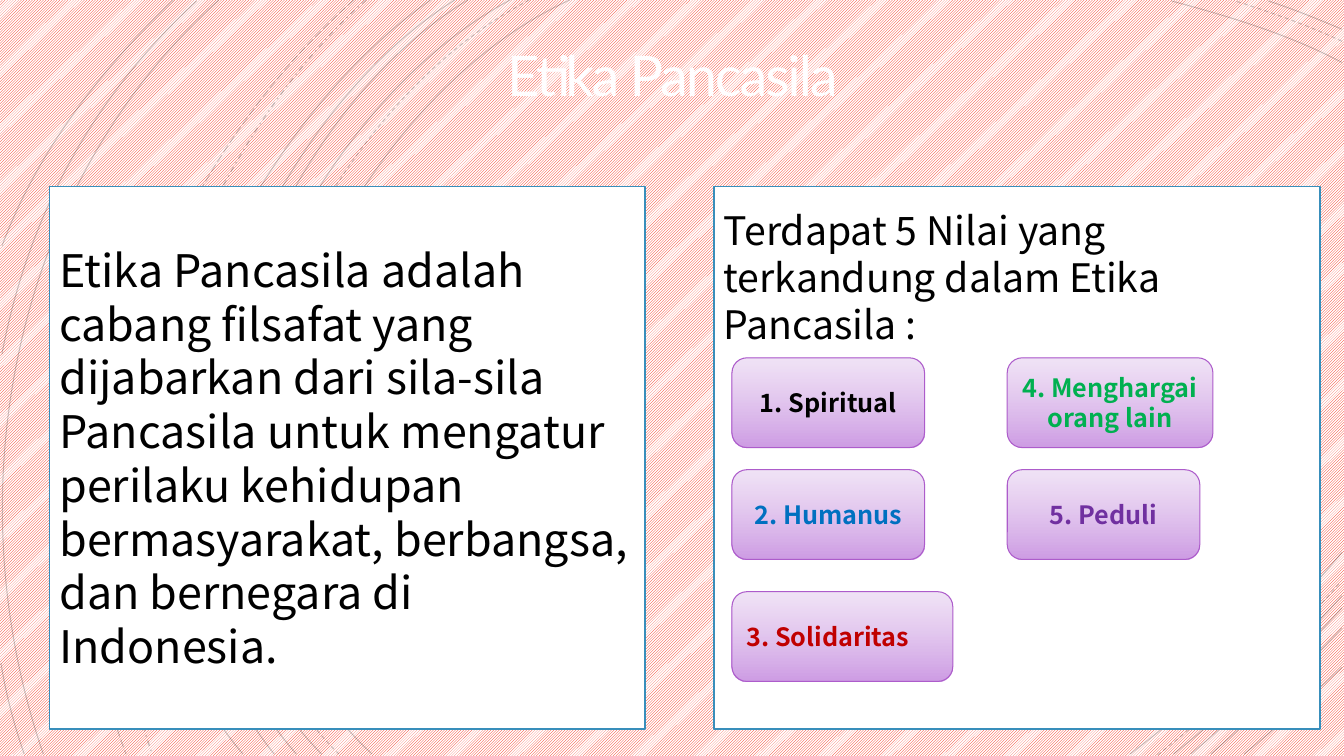
from lxml import etree
from pptx import Presentation
from pptx import util as u
from pptx.dml.color import RGBColor
from pptx.enum import dml, shapes, text
from pptx.oxml import ns

BLACK = RGBColor(0x00, 0x00, 0x00)
WHITE = RGBColor(0xFF, 0xFF, 0xFF)
TITLE_WHITE = RGBColor(0xFF, 0xFE, 0xFF)
RED = RGBColor(0xF8, 0x1B, 0x02)
PANEL_BLUE = RGBColor(0x38, 0x8E, 0xBB)
LILAC = RGBColor(0xE7, 0xD1, 0xF1)
ORCHID = RGBColor(0xCA, 0x94, 0xE2)
BUTTON_EDGE = RGBColor(0xAD, 0x5C, 0xCB)
BLUE = RGBColor(0x00, 0x70, 0xC0)
CRIMSON = RGBColor(0xC0, 0x00, 0x00)
GREEN = RGBColor(0x00, 0xB0, 0x50)
PURPLE = RGBColor(0x70, 0x30, 0xA0)

SOLID = dml.MSO_LINE.SOLID
DASH = dml.MSO_LINE.DASH
DASH_DOT = dml.MSO_LINE.DASH_DOT
LONG_DASH = dml.MSO_LINE.LONG_DASH
LEFT, CENTER = text.PP_ALIGN.LEFT, text.PP_ALIGN.CENTER
TOP, MIDDLE = text.MSO_ANCHOR.TOP, text.MSO_ANCHOR.MIDDLE

# Each arc: start, two control points, end
SOLID_ARCS = [
    [(5.65, 0), (3.15, 1.15), (1.43, 5.4), (3.69, 7.48)],
    [(13.31, 0.62), (12.78, 0.34), (12.18, 0.16), (11.62, 0.01)],
    [(11.21, 7.48), (11.97, 6.9), (12.69, 6.22), (13.31, 5.48)],
    [(5.06, 0), (2.7, 1.27), (1.1, 5.37), (3.19, 7.48)],
    [(13.31, 0.29), (13.07, 0.19), (12.83, 0.09), (12.58, 0.01)],
    [(11.64, 7.48), (12.23, 7.01), (12.8, 6.48), (13.31, 5.91)],
    [(4.64, 0), (2.44, 1.33), (1.1, 5.41), (2.94, 7.48)],
    [(11.81, 7.48), (12.34, 7.04), (12.84, 6.55), (13.31, 6.03)],
    [(4.51, 0), (2.31, 1.38), (0.97, 5.33), (2.72, 7.48)],
    [(12.01, 7.48), (12.46, 7.09), (12.9, 6.67), (13.31, 6.23)],
    [(4.27, 0), (2.17, 1.47), (0.53, 5.29), (2.41, 7.48)],
    [(12.34, 7.48), (12.67, 7.21), (12.99, 6.92), (13.31, 6.62)],
    [(2.17, 0), (0.11, 1.85), (-0.46, 4.9), (0.43, 7.48)],
    [(1.95, 0.01), (0.92, 0.96), (0.28, 2.14), (0.02, 3.51)],
    [(0.01, 6.58), (0.06, 6.89), (0.14, 7.19), (0.24, 7.48)],
    [(1.72, 0), (1, 0.69), (0.37, 1.5), (0.02, 2.44)],
]
DASHED_ARCS = [
    [(5.25, 0), (2.85, 1.25), (1.23, 5.37), (3.36, 7.48)],
    [(13.31, 0.41), (12.97, 0.25), (12.6, 0.12), (12.25, 0.01)],
    [(11.48, 7.49), (12.13, 6.98), (12.75, 6.4), (13.3, 5.77)],
]
DASH_DOT_ARC = [(3.63, 0), (1.76, 1.66), (0.65, 5.09), (1.51, 7.48)]
LONG_DASH_ARC = [(3.51, 0), (1.57, 1.69), (0.29, 4.99), (1.25, 7.48)]


def set_opacity(color_element, percent):
    alpha = etree.SubElement(color_element, ns.qn("a:alpha"))
    alpha.set("val", str(percent * 1000))


class EthicsSlide:
    body_font = "Noto Sans CJK SC"
    title_font = "Lato"

    def __init__(self, deck):
        self.page = deck.slides.add_slide(deck.slide_layouts[6])

    def background(self):
        fill = self.page.background.fill
        fill.patterned()
        fill.pattern = dml.MSO_PATTERN.LIGHT_UPWARD_DIAGONAL
        fill.fore_color.rgb = RED
        fill.back_color.rgb = WHITE

    def arc(self, points, dash=SOLID, width=0.75):
        """Draw one faint cubic curve through start, controls and end."""
        emu = [(u.Inches(x), u.Inches(y)) for x, y in points]
        builder = self.page.shapes.build_freeform(*emu[0])
        builder.add_line_segments(emu[1:], close=False)
        curve = builder.convert_to_shape()
        curve.shadow.inherit = False
        curve.fill.background()
        curve.line.color.rgb = BLACK
        curve.line.width = u.Pt(width)
        curve.line.dash_style = dash
        outline = curve.element.find(".//" + ns.qn("a:ln"))
        set_opacity(outline.find(".//" + ns.qn("a:srgbClr")), 20)
        segments = list(curve.element.iter(ns.qn("a:lnTo")))
        bezier = etree.SubElement(segments[0].getparent(), ns.qn("a:cubicBezTo"))
        for segment in segments:
            bezier.append(segment[0])
            segment.getparent().remove(segment)

    def add_text(self, box, words, size, color, align=LEFT, anchor=MIDDLE,
                 font=body_font, bold=False):
        frame = box.text_frame
        frame.word_wrap = True
        frame.vertical_anchor = anchor
        para = frame.paragraphs[0]
        para.alignment = align
        span = para.add_run()
        span.text = words
        span.font.name = font
        span.font.size = u.Pt(size)
        span.font.bold = bold
        span.font.color.rgb = color
        return para

    def title(self, words):
        box = self.page.shapes.add_textbox(
            u.Inches(0.92), u.Inches(0.22), u.Inches(11.5), u.Inches(1.14))
        para = self.add_text(box, words, 40, TITLE_WHITE, CENTER,
                             font=self.title_font)
        para.line_spacing = 0.85
        box.element.find(".//" + ns.qn("a:rPr")).set("spc", "-150")
        frame = box.text_frame
        frame.margin_left = frame.margin_right = u.Inches(0.25)
        frame.margin_top = frame.margin_bottom = u.Inches(0.25)

    def block(self, kind, left, top, width, height, edge, edge_width):
        box = self.page.shapes.add_shape(
            kind, u.Inches(left), u.Inches(top), u.Inches(width), u.Inches(height))
        box.shadow.inherit = False
        box.line.color.rgb = edge
        box.line.width = u.Pt(edge_width)
        return box

    def panel(self, left, width, words, size, anchor=MIDDLE, top_margin=0.05):
        box = self.block(shapes.MSO_SHAPE.RECTANGLE, left, 1.85, width, 5.38,
                         PANEL_BLUE, 1.25)
        box.fill.solid()
        box.fill.fore_color.rgb = WHITE
        self.add_text(box, words, size, BLACK, anchor=anchor)
        box.text_frame.margin_top = u.Inches(top_margin)

    def button(self, left, top, words, color, width=1.91, align=CENTER):
        box = self.block(shapes.MSO_SHAPE.ROUNDED_RECTANGLE, left, top, width,
                         0.89, BUTTON_EDGE, 0.75)
        box.fill.gradient()
        box.fill.gradient_angle = 270
        stops = zip(box.fill.gradient_stops, (LILAC, ORCHID), (0, 1))
        for stop, shade, position in stops:
            stop.color.rgb = shade
            stop.position = position
        for mark, opacity in zip(box.element.iter(ns.qn("a:gs")), (60, 92)):
            set_opacity(mark[0], opacity)
        self.add_text(box, words, 18, color, align, bold=True)


def main():
    deck = Presentation()
    deck.slide_width, deck.slide_height = u.Inches(13.33), u.Inches(7.5)
    slide = EthicsSlide(deck)
    slide.background()
    for arc in SOLID_ARCS:
        slide.arc(arc)
    for arc in DASHED_ARCS:
        slide.arc(arc, DASH)
    slide.arc(DASH_DOT_ARC, DASH_DOT, 1)
    slide.arc(LONG_DASH_ARC, LONG_DASH)

    slide.title("Etika Pancasila")
    slide.panel(0.49, 5.91, "Etika Pancasila adalah cabang filsafat yang "
                "dijabarkan dari sila-sila Pancasila untuk mengatur perilaku "
                "kehidupan bermasyarakat, berbangsa, dan bernegara di Indonesia.", 32)
    slide.panel(7.08, 6.01, "Terdapat 5 Nilai yang terkandung dalam Etika "
                "Pancasila :", 28, TOP, 0.2)

    first_column, second_column = 7.26, 9.99
    first_row, second_row, third_row = 3.55, 4.66, 5.87
    slide.button(first_column, first_row, "1. Spiritual", BLACK)
    slide.button(first_column, second_row, "2. Humanus", BLUE)
    slide.button(first_column, third_row, "3. Solidaritas", CRIMSON, 2.19, LEFT)
    slide.button(second_column, first_row, "4. Menghargai orang lain", GREEN, 2.04)
    slide.button(second_column, second_row, "5. Peduli", PURPLE)
    deck.save("out.pptx")


if __name__ == "__main__":
    main()
